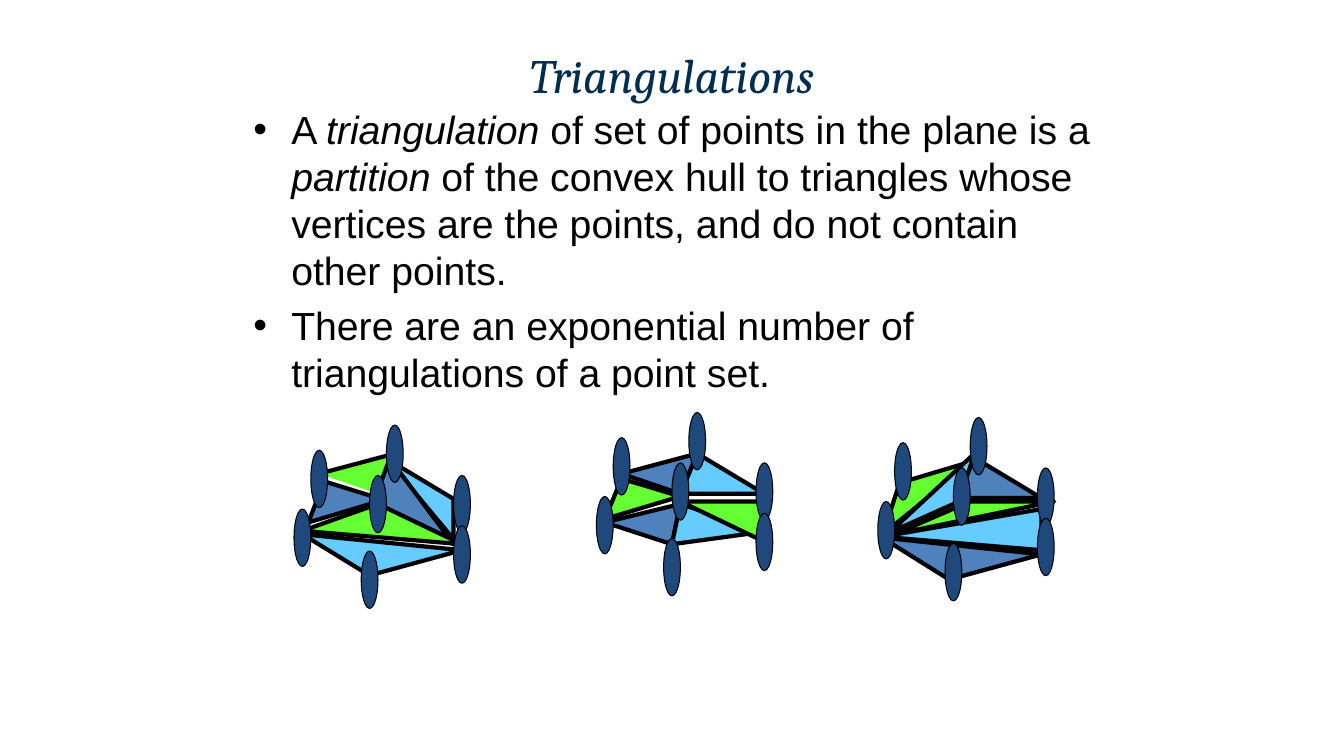
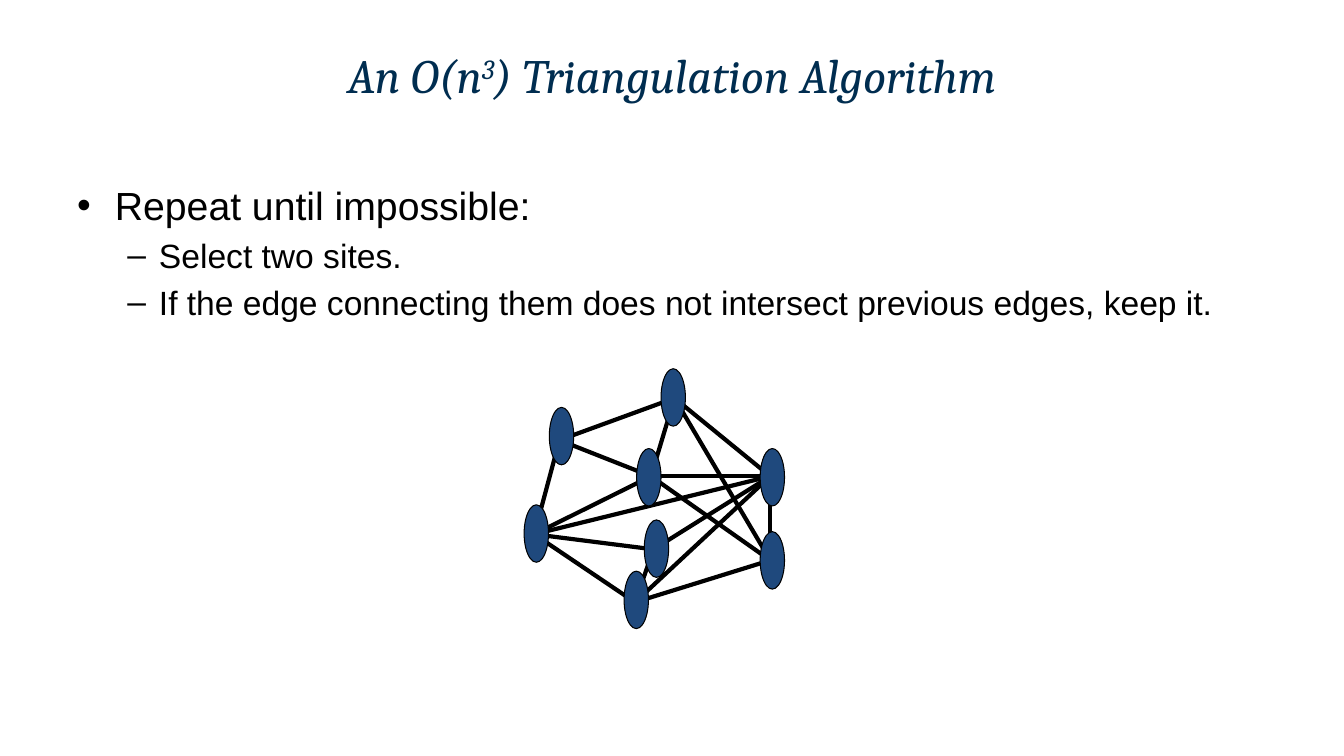
import pptx
import pptx.dml.color
import pptx.enum.shapes
import pptx.enum.text
import pptx.oxml
import pptx.oxml.ns
import pptx.util

RGBColor = pptx.dml.color.RGBColor
NAVY = RGBColor(0x00, 0x2D, 0x50)
BLACK = RGBColor(0x00, 0x00, 0x00)
SITE_BLUE = RGBColor(0x1F, 0x49, 0x7D)
BLUE = RGBColor(0x4F, 0x81, 0xBD)
SKY = RGBColor(0x66, 0xCC, 0xFF)
GREEN = RGBColor(0x66, 0xFF, 0x33)

# The slide is a grid of 160 by 90 square cells, twelve to the inch.
COLUMNS, ROWS = 160, 90
TITLE_BOX = (8, 4.56, 144, 8.64)
SITE_HEIGHT = 6.84
EDGE_WIDTH = 3

# Per list level: bullet, left margin and hanging indent in cells, text size
LEVELS = [("•", 4.5, 4.5, 28), ("–", 9.75, 3.75, 24)]

POINT_SET = [(11, 0), (9, 6), (2, 3), (19, 6), (0, 10), (8, 15), (19, 12)]

# Per diagram: left, top, and triangles as fill, corners, closed
TRIANGULATIONS = [
    (35, 50.6, [
        (SKY, [(11, 4), (19, 8.8), (19, 13.6)], True),
        (SKY, [(20, 14.9), (9, 17.9), (1, 13)], True),
        (BLUE, [(1.7, 11.6), (3.6, 6.7), (10.7, 8.9)], True),
        (GREEN, [(3, 5.8), (12, 3.4), (10, 8.2)], False),
        (BLUE, [(9.5, 9.1), (11.4, 4), (19, 14.2)], True),
        (GREEN, [(1, 12.6), (10, 9.4), (20, 14.2)], True),
    ]),
    (71, 49.1, [
        (GREEN, [(3, 7.9), (10, 10), (1, 12.7)], True),
        (BLUE, [(1, 13.1), (10, 10.9), (9, 15.7)], True),
        (SKY, [(9, 15.7), (10, 10.9), (20, 14.2)], True),
        (GREEN, [(20, 15.4), (10, 10.6), (20, 10.6)], True),
        (SKY, [(20, 9.7), (10, 9.7), (12, 4.9)], True),
        (BLUE, [(12, 4.9), (10, 9.7), (3, 7.3)], True),
    ]),
    (104.5, 49.7, [
        (GREEN, [(2, 13.9), (11, 10), (21, 10)], True),
        (SKY, [(0.5, 14.2), (19.5, 15.8), (19.5, 10.9)], True),
        (BLUE, [(0.5, 14.3), (19.5, 16.3), (8.5, 19.3)], True),
        (GREEN, [(0.6, 13.9), (2.6, 7.8), (11.3, 5.2)], True),
        (SKY, [(1.4, 13.7), (11.5, 4.3), (9.7, 10)], True),
        (BLUE, [(11.5, 4.8), (9.5, 9.6), (19.5, 9.6)], True),
    ]),
]

# Per site: left and top of its oval, and the point where its edges meet
GRAPH_SITES = {
    "top": ((16.3, 0), (17.9, 3.5)),
    "middle": ((13.4, 9.5), (15.1, 12.8)),
    "upper left": ((3, 4.6), (4.2, 8.5)),
    "right": ((28.1, 9.5), (29.3, 12.8)),
    "left": ((0, 16.2), (1.2, 19.7)),
    "bottom": ((11.9, 24.1), (13.2, 27.8)),
    "lower right": ((28.1, 19.4), (29.3, 22.8)),
    "inner": ((14.3, 18), (15.4, 21.5)),
}
GRAPH_EDGES = [
    ("middle", "lower right"), ("top", "lower right"), ("top", "right"),
    ("right", "middle"), ("upper left", "top"), ("top", "middle"),
    ("right", "inner"), ("right", "lower right"), ("inner", "left"),
    ("left", "upper left"), ("inner", "bottom"), ("left", "bottom"),
    ("upper left", "middle"), ("right", "bottom"),
    ("lower right", "bottom"), ("right", "left"), ("left", "middle"),
]


def cells(count):
    return pptx.util.Inches(count / 12)


def add_text_frame(slide, box):
    text_frame = slide.shapes.add_textbox(*map(cells, box)).text_frame
    text_frame.word_wrap = True
    return text_frame


def add_runs(paragraph, texts, name, size, color):
    for text in texts:
        run = paragraph.add_run()
        run.text = text
        run.font.name = name
        run.font.size = pptx.util.Pt(size)
        run.font.color.rgb = color
    return paragraph.runs


def add_title(slide, texts):
    """Write the title; every second text is a superscript."""
    text_frame = add_text_frame(slide, TITLE_BOX)
    text_frame.vertical_anchor = pptx.enum.text.MSO_ANCHOR.MIDDLE
    paragraph = text_frame.paragraphs[0]
    paragraph.alignment = pptx.enum.text.PP_ALIGN.CENTER
    for index, run in enumerate(add_runs(paragraph, texts, "Cambria", 34.2, NAVY)):
        run.font.italic = True
        if index % 2:
            run.font._element.set("baseline", "30000")


def add_bullets(slide, box, items):
    """Write (level, texts) items; every second text is italic."""
    text_frame = add_text_frame(slide, box)
    for index, (level, texts) in enumerate(items):
        bullet, margin, hanging, size = LEVELS[level]
        paragraph = text_frame.add_paragraph() if index else text_frame.paragraphs[0]
        paragraph.level = level
        paragraph.line_spacing = pptx.util.Pt(size * 1.2)
        paragraph.space_before = pptx.util.Pt(size * 0.2 if index else 0)
        properties = paragraph._p.get_or_add_pPr()
        properties.set("marL", str(cells(margin)))
        properties.set("indent", str(-cells(hanging)))
        for tag, attribute, value in (("a:buFont", "typeface", "Arial"),
                                      ("a:buChar", "char", bullet)):
            element = pptx.oxml.parse_xml(f"<{tag} {pptx.oxml.ns.nsdecls('a')}/>")
            element.set(attribute, value)
            properties.append(element)
        for position, run in enumerate(add_runs(paragraph, texts, "Arial", size, BLACK)):
            run.font.italic = position % 2 == 1


def paint(shape, fill, line_width):
    shape.shadow.inherit = False
    shape.fill.solid()
    shape.fill.fore_color.rgb = fill
    shape.line.color.rgb = BLACK
    shape.line.width = pptx.util.Pt(line_width)


def add_sites(slide, left, top, positions, width):
    group = slide.shapes.add_group_shape()
    for x, y in positions:
        site = group.shapes.add_shape(
            pptx.enum.shapes.MSO_SHAPE.OVAL,
            cells(left + x), cells(top + y), cells(width), cells(SITE_HEIGHT))
        paint(site, SITE_BLUE, 0.75)


def add_triangulation(slide, left, top, triangles):
    for fill, corners, closed in triangles:
        points = [(cells(left + x), cells(top + y)) for x, y in corners]
        builder = slide.shapes.build_freeform(*points[0])
        builder.add_line_segments(points[1:], close=closed)
        paint(builder.convert_to_shape(), fill, EDGE_WIDTH)
    add_sites(slide, left, top, POINT_SET, 2)


def add_graph(slide, left, top):
    for names in GRAPH_EDGES:
        (x1, y1), (x2, y2) = (GRAPH_SITES[name][1] for name in names)
        edge = slide.shapes.add_connector(
            pptx.enum.shapes.MSO_CONNECTOR.STRAIGHT,
            cells(left + x1), cells(top + y1), cells(left + x2), cells(top + y2))
        edge.line.color.rgb = BLACK
        edge.line.width = pptx.util.Pt(EDGE_WIDTH)
        edge._element.spPr.append(
            pptx.oxml.parse_xml(f"<a:effectLst {pptx.oxml.ns.nsdecls('a')}/>"))
    add_sites(slide, left, top, [oval for oval, joint in GRAPH_SITES.values()], 2.9)


def add_slide(presentation, title, body_box, items):
    slide = presentation.slides.add_slide(presentation.slide_layouts[6])
    add_title(slide, title)
    add_bullets(slide, body_box, items)
    return slide


def add_definition_slide(presentation):
    slide = add_slide(presentation, ["Triangulations"], (29, 12, 102, 33.4), [
        (0, ["A ", "triangulation", " of set of points in the plane is a ", "partition",
             " of the convex hull to triangles whose vertices are the points, "
             "and do not contain other points."]),
        (0, ["There are an exponential number of triangulations of a point set."]),
    ])
    for left, top, triangles in TRIANGULATIONS:
        add_triangulation(slide, left, top, triangles)


def add_algorithm_slide(presentation):
    title = ["An O(n", "3", ") Triangulation Algorithm"]
    slide = add_slide(presentation, title, (8, 21, 144, 53.8), [
        (0, ["Repeat until impossible:"]),
        (1, ["Select two sites."]),
        (1, ["If the edge connecting them does not intersect previous edges, keep it."]),
    ])
    add_graph(slide, 62.4, 43.9)


def main():
    presentation = pptx.Presentation()
    presentation.slide_width = cells(COLUMNS)
    presentation.slide_height = cells(ROWS)
    add_definition_slide(presentation)
    add_algorithm_slide(presentation)
    presentation.save("out.pptx")


if __name__ == "__main__":
    main()
